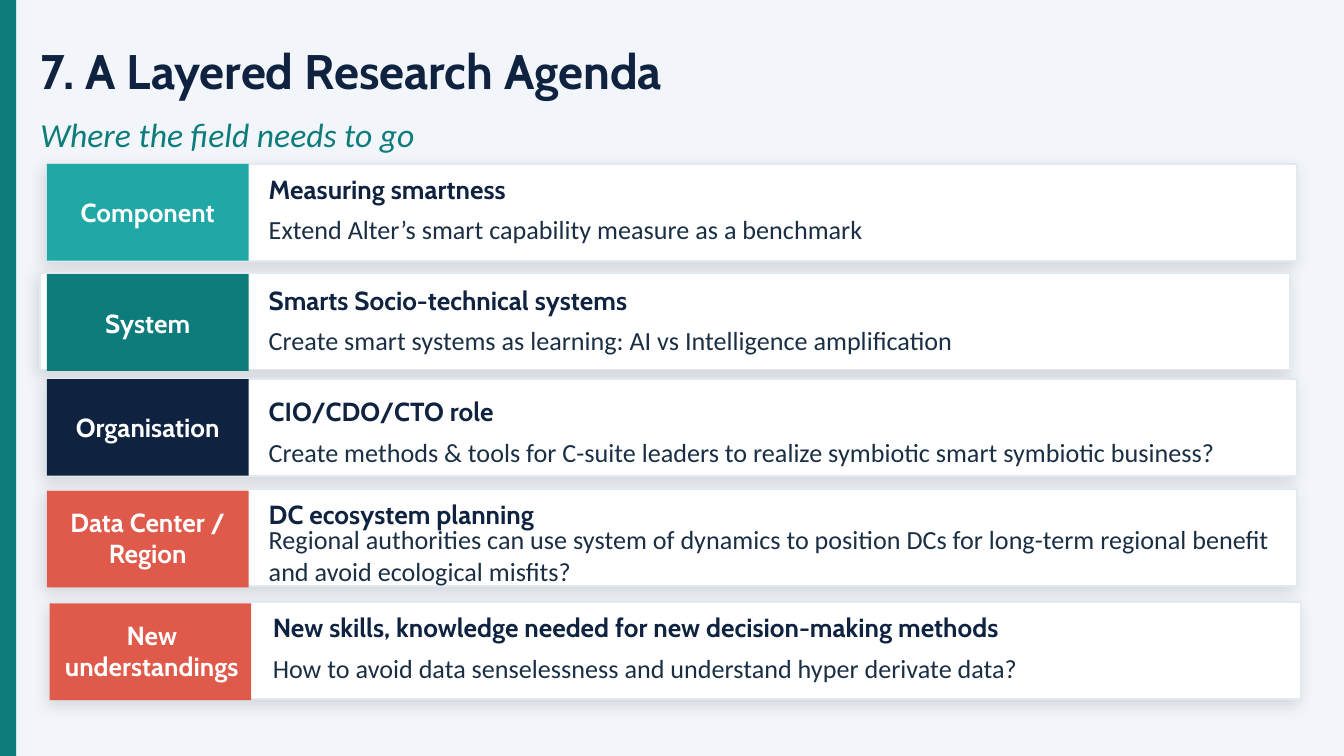
from lxml import etree
from pptx import Presentation
from pptx.dml.color import RGBColor
from pptx.enum.shapes import MSO_SHAPE
from pptx.enum.text import MSO_ANCHOR, MSO_AUTO_SIZE, PP_ALIGN
from pptx.oxml.ns import qn
from pptx.util import Inches, Pt

RECTANGLE = MSO_SHAPE.RECTANGLE
MIDDLE = MSO_ANCHOR.MIDDLE
NO_FIT = MSO_AUTO_SIZE.NONE
LEFT, CENTER = PP_ALIGN.LEFT, PP_ALIGN.CENTER

# Content
TITLE = "7. A Layered Research Agenda"
SUBTITLE = "Where the field needs to go"
LAYERS = [
    {"label": "Component", "color": "aqua",
     "heading": "Measuring smartness",
     "detail": "Extend Alter’s smart capability measure as a benchmark",
     "card": (0.35, 1.22), "tag": (0.35, 1.22), "label_top": 1.27,
     "heading_top": 1.23, "detail_top": 1.51, "detail_height": 0.39},
    {"label": "System", "color": "teal",
     "heading": "Smarts Socio-technical systems",
     "detail": "Create smart systems as learning: AI vs Intelligence amplification",
     "card": (0.3, 2.03), "tag": (0.35, 2.04), "label_top": 2.09,
     "heading_top": 2.06, "detail_top": 2.34},
    {"label": "Organisation", "color": "navy",
     "heading": "CIO/CDO/CTO role",
     "detail": "Create methods & tools for C-suite leaders to realize "
               "symbiotic smart symbiotic business?",
     "card": (0.35, 2.82), "tag": (0.35, 2.82), "label_top": 2.87,
     "heading_top": 2.88, "detail_top": 3.22, "detail_height": 0.28},
    {"label": "Data Center / Region", "color": "coral",
     "heading": "DC ecosystem planning",
     "detail": "Regional authorities can use system of dynamics to position DCs "
               "for long-term regional benefit and avoid ecological misfits?",
     "card": (0.35, 3.64), "tag": (0.35, 3.65), "label_top": 3.69,
     "heading_top": 3.65, "detail_top": 3.94},
    {"label": "New understandings", "color": "coral",
     "heading": "New skills, knowledge needed for new decision-making methods",
     "detail": "How to avoid data senselessness and understand hyper derivate data?",
     "card": (0.38, 4.48), "tag": (0.37, 4.49), "label_top": 4.53,
     "heading_top": 4.49, "heading_width": 6.45, "detail_top": 4.78},
]

# Theme
THEME = {
    "colors": {"page": "F2F6FA", "white": "FFFFFF", "border": "E2EAF0",
               "navy": "0F2340", "ink": "1A2E44", "teal": "0D7C7A",
               "aqua": "1FA8A5", "coral": "E05A4B"},
    # name: font, size, color, bold, italic, alignment
    "text": {"title": ("Cabin", 26, "navy", True, False, LEFT),
             "subtitle": ("Calibri", 18, "teal", False, True, LEFT),
             "label": ("Cabin", 14, "white", True, False, CENTER),
             "heading": ("Cabin", 14, "navy", True, False, LEFT),
             "detail": ("Calibri", 14, "ink", False, False, LEFT)},
}

# Layout in inches, on a 16:9 page
PAGE_WIDTH = 10
PAGE_HEIGHT = PAGE_WIDTH * 9 / 16
CARD_WIDTH, TAG_WIDTH, ROW_HEIGHT = 9.3, 1.5, 0.72
LABEL_INSET = 0.05
TEXT_OFFSET = 1.65


def color(name):
    return RGBColor.from_string(THEME["colors"][name])


def place(box, left, top, width, height):
    box.left, box.top = Inches(left), Inches(top)
    box.width, box.height = Inches(width), Inches(height)


def write(box, text, style):
    font, size, ink, bold, italic, alignment = THEME["text"][style]
    frame = box.text_frame
    frame.text = text
    frame.word_wrap = True
    frame.auto_size = NO_FIT
    frame.vertical_anchor = MIDDLE
    frame.margin_left = frame.margin_right = 0
    frame.margin_top = frame.margin_bottom = 0
    para = frame.paragraphs[0]
    para.alignment = alignment
    span = para.runs[0].font
    span.name, span.size = font, Pt(size)
    span.bold, span.italic = bold, italic
    span.color.rgb = color(ink)


def add_text(shapes, text, style, *area):
    box = shapes.add_textbox(*map(Inches, area))
    write(box, text, style)


def add_block(shapes, fill, *area):
    block = shapes.add_shape(RECTANGLE, *map(Inches, area))
    block.shadow.inherit = False
    block.fill.solid()
    block.fill.fore_color.rgb = color(fill)
    block.line.fill.background()
    return block


def add_soft_shadow(block):
    effects = block.element.spPr.find(qn("a:effectLst"))
    shadow = etree.SubElement(effects, qn("a:outerShdw"), blurRad=str(Pt(8)),
                              dist=str(Pt(3)), dir=str(135 * 60000),
                              algn="bl", rotWithShape="0")
    tint = etree.SubElement(shadow, qn("a:srgbClr"), val="000000")
    etree.SubElement(tint, qn("a:alpha"), val="12000")


def add_layer(page, layer):
    shapes = page.shapes.add_group_shape().shapes
    card_left, card_top = layer["card"]
    tag_left, tag_top = layer["tag"]
    row_left = max(card_left, tag_left)
    text_left = row_left + TEXT_OFFSET

    # White card
    card = add_block(shapes, "white", card_left, card_top, CARD_WIDTH, ROW_HEIGHT)
    card.line.color.rgb = color("border")
    card.line.width = Pt(1)
    add_soft_shadow(card)

    # Coloured tag with its label
    add_block(shapes, layer["color"], tag_left, tag_top, TAG_WIDTH, ROW_HEIGHT)
    add_text(shapes, layer["label"], "label",
             row_left + LABEL_INSET, layer["label_top"],
             TAG_WIDTH - 2 * LABEL_INSET, ROW_HEIGHT - 2 * LABEL_INSET)

    # Heading and detail
    add_text(shapes, layer["heading"], "heading", text_left, layer["heading_top"],
             layer.get("heading_width", 3.8), 0.35)
    add_text(shapes, layer["detail"], "detail", text_left, layer["detail_top"],
             7.5, layer.get("detail_height", 0.38))


def main():
    deck = Presentation()
    deck.slide_width, deck.slide_height = Inches(PAGE_WIDTH), Inches(PAGE_HEIGHT)
    page = deck.slides.add_slide(deck.slide_layouts.get_by_name("Title Only"))
    page.background.fill.solid()
    page.background.fill.fore_color.rgb = color("page")

    # Side band, title and subtitle
    add_block(page.shapes, "teal", 0, 0, 0.12, PAGE_HEIGHT)
    title = page.shapes.title
    place(title, 0.3, 0.22, 9.4, 0.6)
    write(title, TITLE, "title")
    add_text(page.shapes, SUBTITLE, "subtitle", 0.3, 0.82, 9.4, 0.35)

    # Research layers
    for layer in LAYERS:
        add_layer(page, layer)

    deck.save("out.pptx")


if __name__ == "__main__":
    main()
